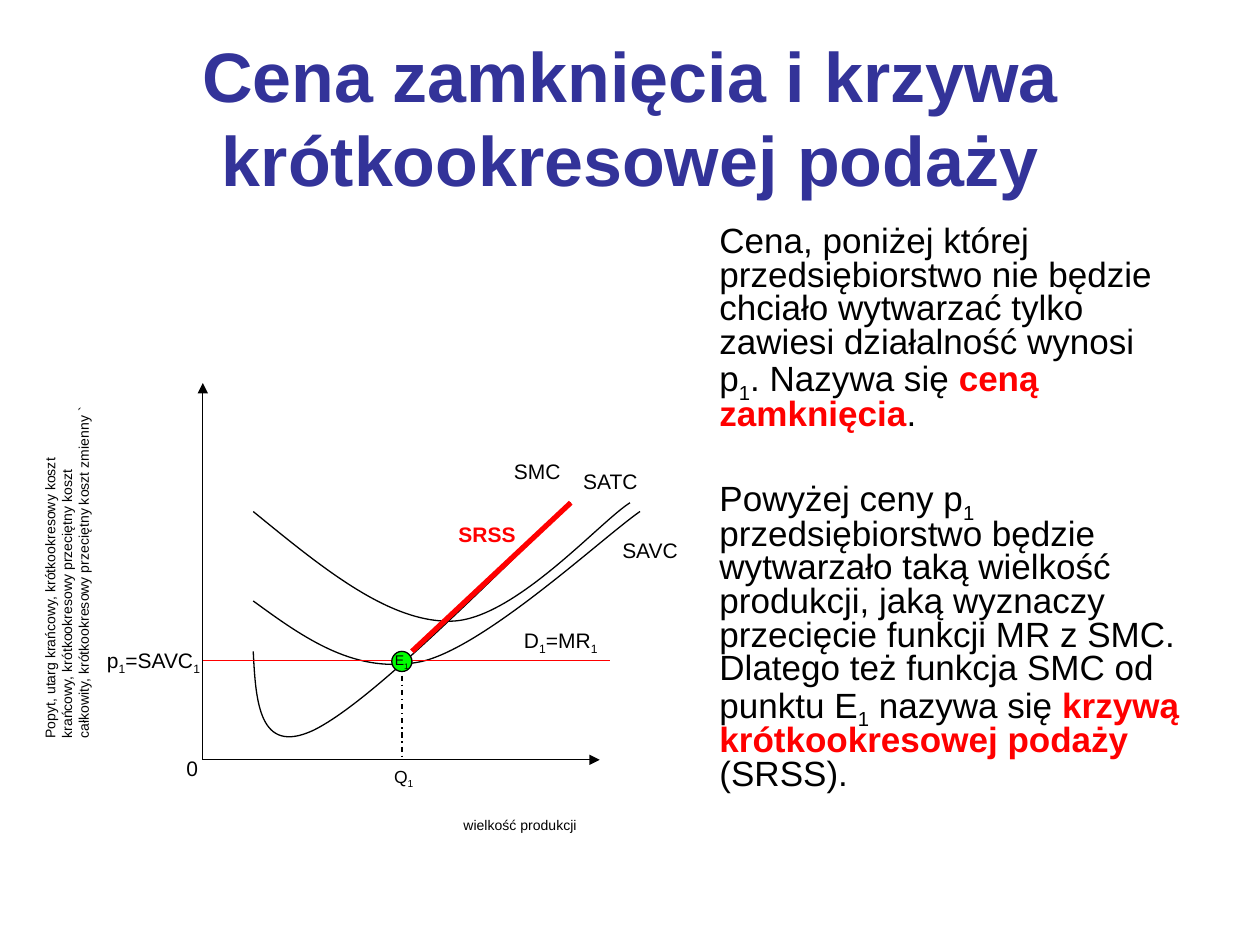
from lxml import etree
from pptx import Presentation
from pptx.dml.color import RGBColor
from pptx.enum import dml, shapes, text
from pptx.oxml.ns import qn
from pptx.util import Inches, Pt

BLACK = RGBColor(0x00, 0x00, 0x00)
RED = RGBColor(0xFF, 0x00, 0x00)
GREEN = RGBColor(0x00, 0xFF, 0x00)
INDIGO = RGBColor(0x33, 0x33, 0x99)


def write(paragraph, content, size, color=BLACK, bold=False):
    """Fill a paragraph; "_" splits off a one-character subscript, "*" toggles bold red."""
    for part_index, part in enumerate(content.split("*")):
        emphasized = part_index % 2 == 1
        for piece_index, piece in enumerate(part.split("_")):
            pieces = [(piece, False)]
            if piece_index:
                pieces = [(piece[0], True), (piece[1:], False)]
            for words, subscript in pieces:
                if not words:
                    continue
                run = paragraph.add_run()
                run.text = words
                run.font.name = "Arial"
                run.font.size = Pt(size)
                run.font.bold = bold or emphasized
                run.font.color.rgb = RED if emphasized else color
                if subscript:
                    run._r.get_or_add_rPr().set("baseline", "-25000")


def add_line(start, end, color=BLACK, width=0.75):
    line = slide.shapes.add_connector(
        shapes.MSO_CONNECTOR.STRAIGHT, *(Inches(value) for value in start + end))
    line.line.color.rgb = color
    line.line.width = Pt(width)
    etree.SubElement(line._element.spPr, qn("a:effectLst"))
    return line


presentation = Presentation()
presentation.slide_width = Inches(10)
presentation.slide_height = Inches(7.5)
slide = presentation.slides.add_slide(presentation.slide_layouts[6])

# Title
title = slide.shapes.add_textbox(Inches(0.5), Inches(0.3), Inches(9), Inches(1.25))
title.text_frame.word_wrap = True
title.text_frame.vertical_anchor = text.MSO_ANCHOR.MIDDLE
title.text_frame.paragraphs[0].alignment = text.PP_ALIGN.CENTER
write(title.text_frame.paragraphs[0],
      "Cena zamknięcia i krzywa krótkookresowej podaży", 40, INDIGO, True)

# Explanation
body = slide.shapes.add_textbox(Inches(5.24), Inches(1.75), Inches(4.26), Inches(5.75))
body.text_frame.word_wrap = True
body.text_frame.margin_left = Inches(0.47)
closing_price = body.text_frame.paragraphs[0]
supply_curve = body.text_frame.add_paragraph()
supply_curve.space_before = Pt(27.5)
write(closing_price, "Cena, poniżej której przedsiębiorstwo nie będzie chciało wytwarzać "
      "tylko zawiesi działalność wynosi p_1. Nazywa się *ceną zamknięcia*.", 20)
write(supply_curve, "Powyżej ceny p_1 przedsiębiorstwo będzie wytwarzało taką wielkość "
      "produkcji, jaką wyznaczy przecięcie funkcji MR z SMC. Dlatego też funkcja SMC od "
      "punktu E_1 nazywa się *krzywą krótkookresowej podaży* (SRSS).", 20)
for paragraph in body.text_frame.paragraphs:
    paragraph.line_spacing = 0.8

# Axes
origin = (1.61, 6.03)
for axis_end in [(1.61, 3.04), (4.76, 6.03)]:
    axis = add_line(origin, axis_end)
    etree.SubElement(axis.line._get_or_add_ln(), qn("a:tailEnd"), type="triangle")

# Cost curves in hundredths of an inch: a start point, then three points per Bézier segment
cost_curves = [
    [(201, 517), (203, 558), (206, 599), (248, 580), (290, 560), (371, 479), (453, 399)],
    [(201, 406), (255, 450), (308, 494), (358, 493), (408, 492), (476, 414), (500, 399)],
    [(201, 477), (242, 507), (283, 536), (335, 525), (386, 513), (479, 426), (508, 406)],
]
for points in cost_curves:
    builder = slide.shapes.build_freeform(*points[0], scale=Inches(0.01))
    builder.add_line_segments(points[1:], close=False)
    curve = builder.convert_to_shape()
    curve.shadow.inherit = False
    curve.fill.background()
    curve.line.color.rgb = BLACK
    curve.line.width = Pt(0.75)
    # Turn each three straight steps into one cubic segment
    segments = list(curve._element.iter(qn("a:lnTo")))
    for first in range(0, len(segments), 3):
        cubic = etree.Element(qn("a:cubicBezTo"))
        segments[first].addprevious(cubic)
        for segment in segments[first:first + 3]:
            cubic.append(segment[0])
            segment.getparent().remove(segment)

# Demand line, quantity marker and equilibrium point
add_line((1.61, 5.24), (4.84, 5.24), RED)
quantity_line = add_line((3.19, 5.25), (3.19, 6.03))
quantity_line.line.dash_style = dml.MSO_LINE.DASH_DOT

equilibrium = slide.shapes.add_shape(
    shapes.MSO_SHAPE.OVAL, Inches(3.11), Inches(5.17), Inches(0.16), Inches(0.16))
equilibrium.shadow.inherit = False
equilibrium.fill.solid()
equilibrium.fill.fore_color.rgb = GREEN
equilibrium.line.color.rgb = BLACK
equilibrium.line.width = Pt(0.75)
equilibrium.text_frame.word_wrap = False
equilibrium.text_frame.vertical_anchor = text.MSO_ANCHOR.MIDDLE
equilibrium.text_frame.paragraphs[0].alignment = text.PP_ALIGN.CENTER
write(equilibrium.text_frame.paragraphs[0], "E_1", 8)

# Short-run supply
add_line((3.27, 5.17), (4.53, 3.99), RED, 3)

# Vertical axis label, reading upwards
axis_label = slide.shapes.add_textbox(Inches(0.28), Inches(3.12), Inches(0.5), Inches(2.84))
axis_label.text_frame.word_wrap = True
axis_label.text_frame._txBody.bodyPr.set("vert", "vert270")
axis_paragraph = axis_label.text_frame.paragraphs[0]
write(axis_paragraph, "Popyt, utarg krańcowy, krótkookresowy koszt krańcowy, "
      "krótkookresowy przeciętny koszt", 8)
axis_paragraph.add_line_break()
write(axis_paragraph, "całkowity, krótkookresowy przeciętny koszt zmienny `", 8)

# Labels: content, left, top, width, height, size
labels = [
    ("0", 1.38, 5.95, 0.32, 0.3, 12),
    ("wielkość produkcji", 3.58, 6.43, 1.97, 0.23, 8),
    ("Q_1", 3.03, 6.03, 0.39, 0.27, 10),
    ("D_1=MR_1", 4.06, 4.93, 0.94, 0.3, 12),
    ("p_1=SAVC_1", 0.75, 5.09, 1.02, 0.3, 12),
    ("SMC", 3.98, 3.59, 0.86, 0.3, 12),
    ("SATC", 4.53, 3.67, 1.1, 0.3, 12),
    ("SAVC", 4.84, 4.22, 1.65, 0.3, 12),
    ("*SRSS*", 3.54, 4.09, 0.71, 0.3, 12),
]
for content, left, top, width, height, size in labels:
    label = slide.shapes.add_textbox(Inches(left), Inches(top), Inches(width), Inches(height))
    label.text_frame.word_wrap = True
    write(label.text_frame.paragraphs[0], content, size)

presentation.save("out.pptx")
